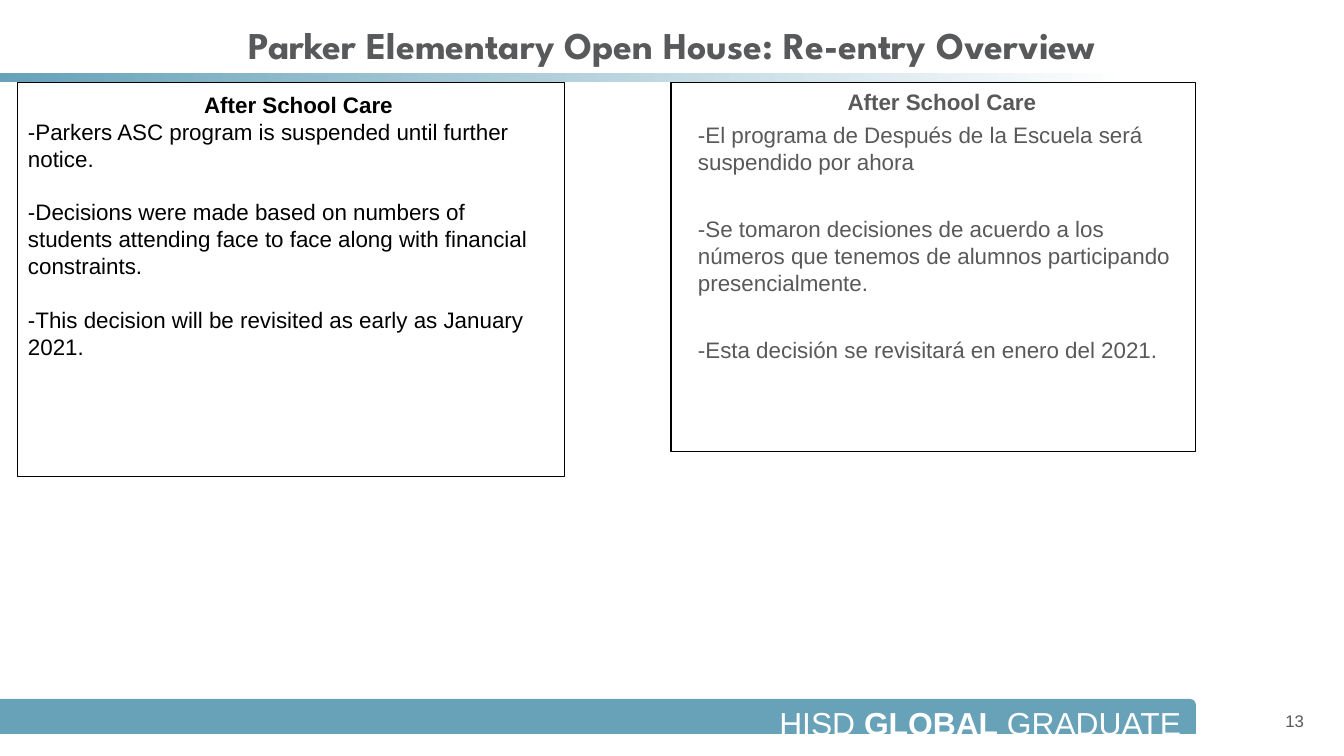
from pptx import Presentation
from pptx import util as u
from pptx.dml.color import RGBColor
from pptx.enum import shapes, text
from pptx.oxml.xmlchemy import OxmlElement

TEAL = RGBColor(0x67, 0xA2, 0xB9)
WHITE = RGBColor(0xFF, 0xFF, 0xFF)
BLACK = RGBColor(0, 0, 0)
SLATE = RGBColor(0x58, 0x59, 0x5B)
GREY = RGBColor(0x59, 0x59, 0x59)

LEFT, CENTER, RIGHT = text.PP_ALIGN.LEFT, text.PP_ALIGN.CENTER, text.PP_ALIGN.RIGHT
TOP, MIDDLE = text.MSO_ANCHOR.TOP, text.MSO_ANCHOR.MIDDLE

ENGLISH = [
    "-Parkers ASC program is suspended until further notice.",
    "-Decisions were made based on numbers of students attending face to face "
    "along with financial constraints.",
    "-This decision will be revisited as early as January 2021.",
]
SPANISH = [
    "-El programa de Después de la Escuela será suspendido por ahora",
    "-Se tomaron decisiones de acuerdo a los números que tenemos de alumnos "
    "participando presencialmente.",
    "-Esta decisión se revisitará en enero del 2021.",
]


def px(count):
    return u.Emu(round(count * 914400 / 100.8))


def assign(target, values):
    for name, value in values.items():
        setattr(target, name, value)


class SlideBuilder:
    font = "Arial"
    leading = 1.2

    def __init__(self, deck):
        self.page = deck.slides.add_slide(deck.slide_layouts[1])
        self.title_box, self.body_box = self.page.placeholders

    def place(self, shape, area):
        assign(shape, dict(zip(("left", "top", "width", "height"), map(px, area))))

    def frame(self, shape, insets=(10, 5, 10, 5), anchor=TOP):
        sides = ("margin_left", "margin_top", "margin_right", "margin_bottom")
        assign(shape.text_frame, {
            "word_wrap": True,
            "auto_size": text.MSO_AUTO_SIZE.NONE,
            "vertical_anchor": anchor,
            **dict(zip(sides, map(px, insets))),
        })
        return shape.text_frame

    def fill_para(self, para, spans, size, color, align=LEFT, before=0, indent=0, font=None):
        properties = para._p.get_or_add_pPr()
        properties.set("marL", str(px(indent)))
        properties.set("indent", "0")
        properties.append(OxmlElement("a:buNone"))
        assign(para, {
            "alignment": align,
            "space_before": u.Pt(before),
            "space_after": u.Pt(0),
            "line_spacing": u.Pt(size * self.leading),
        })
        for words, bold in spans:
            span = para.add_run()
            span.text = words
            assign(span.font, {"name": font or self.font, "size": u.Pt(size), "bold": bold})
            span.font.color.rgb = color

    def bar(self, kind, area):
        shape = self.page.shapes.add_shape(kind, *map(px, area))
        shape.shadow.inherit = False
        shape.line.fill.background()
        return shape

    def solid_bar(self, area):
        fill = self.bar(shapes.MSO_SHAPE.ROUND_1_RECTANGLE, area).fill
        fill.solid()
        fill.fore_color.rgb = TEAL

    def fading_bar(self, area):
        fill = self.bar(shapes.MSO_SHAPE.RECTANGLE, area).fill
        fill.gradient()
        fill.gradient_angle = 0
        for stop, color, position in zip(fill.gradient_stops, (TEAL, WHITE), (0, 1)):
            stop.color.rgb = color
            stop.position = position

    def title(self, words, area):
        self.place(self.title_box, area)
        para = self.frame(self.title_box, anchor=MIDDLE).paragraphs[0]
        self.fill_para(para, [(words, True)], 27, SLATE, CENTER, font="League Spartan")

    def label(self, spans, area, size, color, **framing):
        box = self.page.shapes.add_textbox(*map(px, area))
        para = self.frame(box, **framing).paragraphs[0]
        self.fill_para(para, spans, size, color, RIGHT)

    def panel(self, box, heading, points, color, gaps, indents, insets=(10, 5, 10, 5)):
        first_gap, gap = gaps
        heading_indent, point_indent = indents
        box.line.color.rgb = BLACK
        box.line.width = u.Pt(0.75)
        frame = self.frame(box, insets)
        self.fill_para(frame.paragraphs[0], [(heading, True)], 16, color, CENTER,
                       indent=heading_indent)
        for number, point in enumerate(points):
            self.fill_para(frame.add_paragraph(), [(point, False)], 16, color,
                           before=gap if number else first_gap, indent=point_indent)

    def text_panel(self, area, *content, **framing):
        self.panel(self.page.shapes.add_textbox(*map(px, area)), *content, **framing)

    def body_panel(self, area, *content):
        self.place(self.body_box, area)
        self.panel(self.body_box, *content)


def main():
    deck = Presentation()
    deck.slide_width, deck.slide_height = px(1344), px(756)
    slide = SlideBuilder(deck)
    slide.fading_bar((0, 73, 1132, 9))
    slide.solid_bar((0, 699, 1196, 35))
    slide.label([("HISD ", False), ("GLOBAL", True), (" GRADUATE", False)],
                (505, 697, 689, 39), 22.7, WHITE, insets=(13, 7, 13, 7))
    slide.title("Parker Elementary Open House: Re-entry Overview", (67, 16, 1210, 57))
    slide.label([("13", False)], (1226, 701, 88, 40), 12, SLATE, anchor=MIDDLE)
    slide.text_panel((18, 83, 547, 394), "After School Care", ENGLISH, BLACK,
                     (0, 19.2), (14, 0), insets=(10, 8, 10, 5))
    slide.body_panel((671, 83, 525, 369), "After School Care", SPANISH, GREY,
                     (4.8, 28.8), (17, 17))
    deck.save("out.pptx")


if __name__ == "__main__":
    main()
